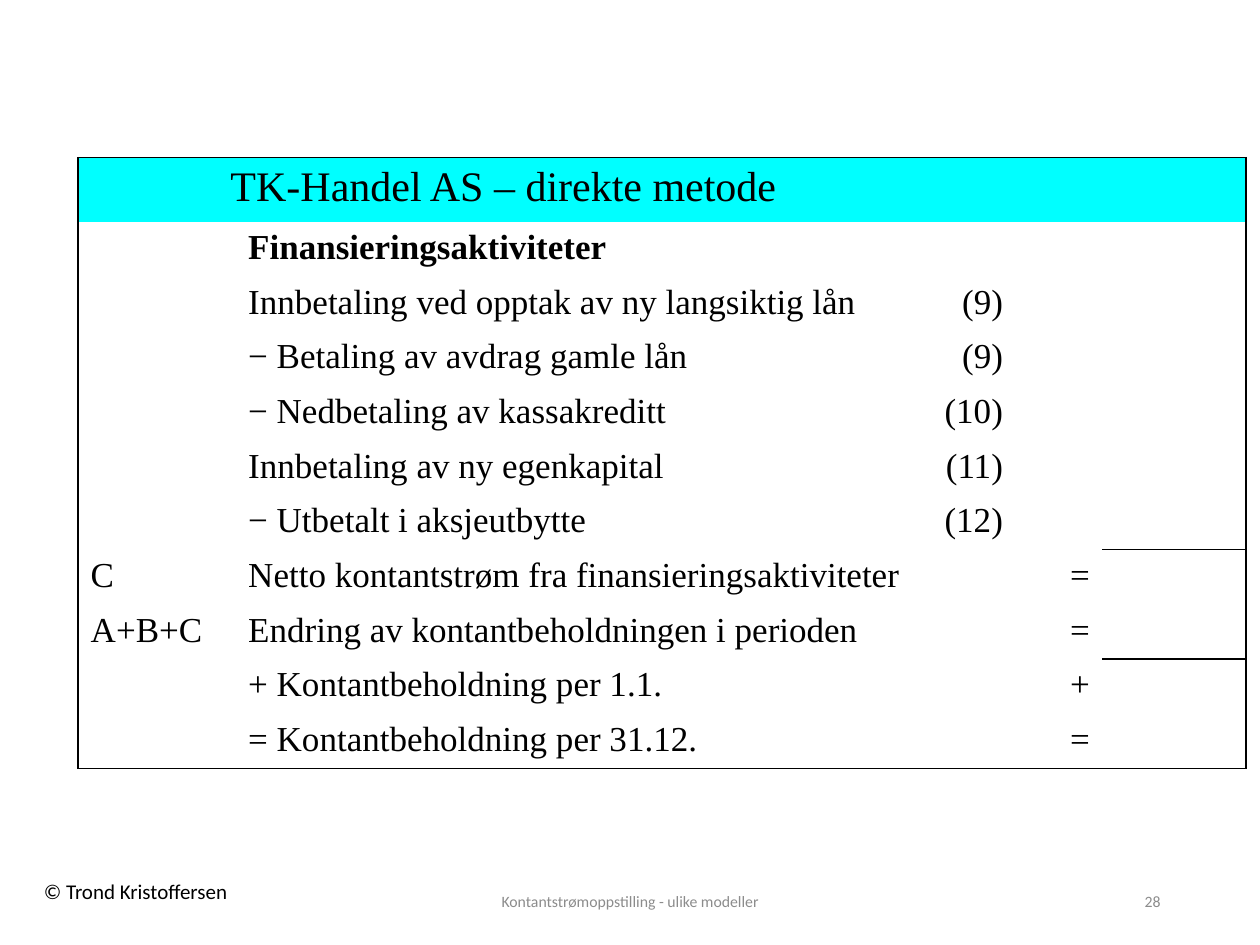
from lxml.etree import SubElement
from pptx import Presentation
from pptx.dml.color import RGBColor
from pptx.enum.text import MSO_ANCHOR, PP_ALIGN
from pptx.oxml.ns import qn
from pptx.util import Inches, Pt

SERIF = "Times New Roman"
TITLE = "TK-Handel AS – direkte metode"
COLS = [1.25, 5.5, 0.69, 0.69, 1.14]
HEAD, BODY = 0.51, 4.34
ROWS = [
    ("", "Finansieringsaktiviteter", "", ""),
    ("", "Innbetaling ved opptak av ny langsiktig lån", "(9)", ""),
    ("", "− Betaling av avdrag gamle lån", "(9)", ""),
    ("", "− Nedbetaling av kassakreditt", "(10)", ""),
    ("", "Innbetaling av ny egenkapital", "(11)", ""),
    ("", "− Utbetalt i aksjeutbytte", "(12)", ""),
    ("C", "Netto kontantstrøm fra finansieringsaktiviteter", "", "="),
    ("A+B+C", "Endring av kontantbeholdningen i perioden", "", "="),
    ("", "+ Kontantbeholdning per 1.1.", "", "+"),
    ("", "= Kontantbeholdning per 31.12.", "", "="),
]
RULED = (6, 8)


def color(code):
    return RGBColor.from_string(code)


def write(frame, text, size, name, code="000000", align=PP_ALIGN.LEFT, bold=False):
    par = frame.paragraphs[0]
    par.text = text
    par.alignment = align
    font = par.font
    font.size, font.name, font.bold = Pt(size), name, bold
    font.color.rgb = color(code)


def add_text(slide, box, text, size, code, align=PP_ALIGN.LEFT, wrap=True,
             anchor=MSO_ANCHOR.MIDDLE):
    frame = slide.shapes.add_textbox(*map(Inches, box)).text_frame
    frame.word_wrap = wrap
    frame.vertical_anchor = anchor
    write(frame, text, size, "Calibri", code, align)


def set_edges(cell, edges):
    props = cell._tc.get_or_add_tcPr()
    for side in "LRTB":
        line = SubElement(props, qn(f"a:ln{side}"), w=str(Pt(1)))
        if side in edges:
            fill = SubElement(line, qn("a:solidFill"))
            SubElement(fill, qn("a:srgbClr"), val="000000")
        else:
            SubElement(line, qn("a:noFill"))


def find_edges(row, col):
    last = len(COLS) - 1
    rules = {
        "L": col == 0,
        "R": col == last,
        "T": row == 0 or (col == last and row - 1 in RULED),
        "B": row == len(ROWS) or (col == last and row in RULED),
    }
    return [side for side, drawn in rules.items() if drawn]


def add_grid(slide):
    box = map(Inches, (0.62, 1.25, sum(COLS), HEAD + BODY))
    table = slide.shapes.add_table(len(ROWS) + 1, len(COLS), *box).table
    table.first_row = table.horz_banding = False
    for col, width in zip(table.columns, COLS):
        col.width = Inches(width)
    for row in table.rows:
        row.height = Inches(BODY / len(ROWS))
    table.rows[0].height = Inches(HEAD)

    for row in range(len(ROWS) + 1):
        for col in range(len(COLS)):
            cell = table.cell(row, col)
            set_edges(cell, find_edges(row, col))
            if row == 0:
                cell.fill.solid()
                cell.fill.fore_color.rgb = color("00FFFF")
            else:
                cell.fill.background()

    table.cell(0, 0).merge(table.cell(0, 1))
    write(table.cell(0, 0).text_frame, TITLE, 24, SERIF, align=PP_ALIGN.CENTER)
    for row, texts in enumerate(ROWS, 1):
        for col, text in enumerate(texts):
            if text:
                align = PP_ALIGN.RIGHT if col > 1 else PP_ALIGN.LEFT
                write(table.cell(row, col).text_frame, text, 20, SERIF,
                      align=align, bold=row == 1)


def main():
    deck = Presentation()
    deck.slide_width, deck.slide_height = Inches(10), Inches(7.5)
    slide = deck.slides.add_slide(deck.slide_layouts[6])
    add_text(slide, (0.25, 6.92, 1.7, 0.3), "© Trond Kristoffersen", 12, "000000",
             wrap=False, anchor=MSO_ANCHOR.TOP)
    add_text(slide, (3.31, 6.95, 3.38, 0.4),
             "Kontantstrømoppstilling - ulike modeller", 9, "8C8C8C", PP_ALIGN.CENTER)
    add_text(slide, (7.06, 6.95, 2.25, 0.4), "28", 9, "8C8C8C", PP_ALIGN.RIGHT)
    add_grid(slide)
    deck.save("out.pptx")


if __name__ == "__main__":
    main()
